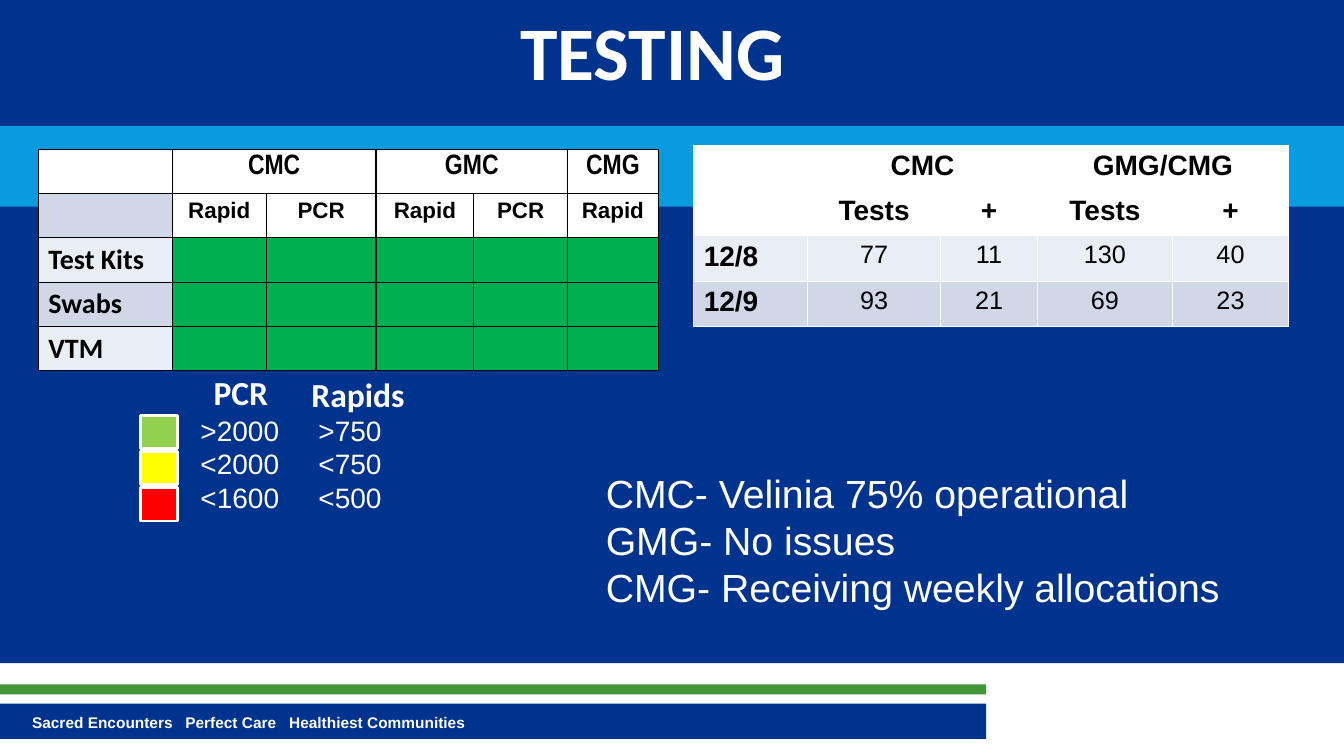
from lxml import etree
from pptx import Presentation
from pptx import util as u
from pptx.dml.color import RGBColor
from pptx.enum import shapes, text
from pptx.oxml.ns import qn

WIDTH, HEIGHT = 13.33, 7.5
COLORS = {
    "navy": "00338E", "sky": "099BDD", "leaf": "439539", "white": "FFFFFF",
    "black": "000000", "stock": "00B050", "light": "E9EDF4", "mid": "D0D8E8",
    "lime": "92D050", "yellow": "FFFF00", "red": "FF0000",
}

# Content
TITLE = "TESTING"
MOTTO = ["Sacred Encounters", "Perfect Care", "Healthiest Communities"]
STATUS_NOTES = [
    "CMC- Velinia 75% operational",
    "GMG- No issues",
    "CMG- Receiving weekly allocations",
]
SUPPLY_SITES = ["", "CMC", "", "GMC", "", "CMG"]
SUPPLY_KINDS = ["", "Rapid", "PCR", "Rapid", "PCR", "Rapid"]
SUPPLY_ITEMS = ["Test Kits", "Swabs", "VTM"]
RESULTS = [
    ["", "CMC", "", "GMG/CMG", ""],
    ["", "Tests", "+", "Tests", "+"],
    ["12/8", "77", "11", "130", "40"],
    ["12/9", "93", "21", "69", "23"],
]
LEGEND = [("lime", ">2000", ">750"), ("yellow", "<2000", "<750"), ("red", "<1600", "<500")]

# Layout in inches
BANDS = [
    ("navy", 0, 0, WIDTH, 6.58),
    ("navy", 0, 6.98, 9.78, 0.35),
    ("leaf", 0, 6.79, 9.78, 0.1),
    ("sky", 0, 1.25, WIDTH, 0.8),
]
SUPPLY_COLUMNS = [1.33, 0.93, 1.09, 0.97, 0.93, 0.9]
RESULT_COLUMNS = [1.13, 1.32, 0.96, 1.34, 1.15]
SWATCH_LEFT, SWATCH_TOP, SWATCH_STEP = 1.39, 4.12, 0.36


def rgb(name):
    return RGBColor.from_string(COLORS[name])


def add_rectangle(slide, color, left, top, width, height, outline=None):
    shape = slide.shapes.add_shape(
        shapes.MSO_SHAPE.RECTANGLE, *map(u.Inches, (left, top, width, height)))
    shape.shadow.inherit = False
    shape.fill.solid()
    shape.fill.fore_color.rgb = rgb(color)
    if outline:
        shape.line.color.rgb = rgb(outline)
        shape.line.width = u.Pt(2)
    else:
        shape.line.fill.background()


def format_runs(paragraph, size, font, bold, color):
    for run in paragraph.runs:
        run.font.size = u.Pt(size)
        run.font.name = font
        run.font.bold = bold
        run.font.color.rgb = rgb(color)


def add_text(slide, lines, box, size, font="Arial", bold=False, wrap=True,
             align=text.PP_ALIGN.LEFT, tabs=()):
    """Add white text, one paragraph per line, with tab stops in inches."""
    frame = slide.shapes.add_textbox(*map(u.Inches, box)).text_frame
    frame.word_wrap = wrap
    frame.text = "\n".join(lines)
    for paragraph in frame.paragraphs:
        paragraph.alignment = align
        if tabs:
            stops = etree.SubElement(paragraph._p.get_or_add_pPr(), qn("a:tabLst"))
            for position in tabs:
                etree.SubElement(stops, qn("a:tab"), pos=str(u.Inches(position)), algn="l")
        format_runs(paragraph, size, font, bold, "white")


def set_borders(cell, color):
    properties = cell._tc.get_or_add_tcPr()
    for index, side in enumerate(("lnL", "lnR", "lnT", "lnB")):
        line = etree.Element(qn("a:" + side), w=str(u.Pt(1)))
        fill = etree.SubElement(line, qn("a:solidFill"))
        etree.SubElement(fill, qn("a:srgbClr"), val=COLORS[color])
        properties.insert(index, line)


def add_grid(slide, rows, left, top, columns, row_height, border, merges, style):
    """Add a table; style(row, column) gives fill, size, font and bold."""
    frame = slide.shapes.add_table(
        len(rows), len(columns), u.Inches(left), u.Inches(top),
        u.Inches(sum(columns)), u.Inches(row_height * len(rows)))
    table = frame.table
    table.first_row = table.horz_banding = False
    for column, width in zip(table.columns, columns):
        column.width = u.Inches(width)
    for r, values in enumerate(rows):
        table.rows[r].height = u.Inches(row_height)
        for c, value in enumerate(values):
            cell = table.cell(r, c)
            fill, size, font, bold = style(r, c)
            cell.fill.solid()
            cell.fill.fore_color.rgb = rgb(fill)
            set_borders(cell, border)
            cell.text_frame.text = value
            paragraph = cell.text_frame.paragraphs[0]
            paragraph.alignment = text.PP_ALIGN.CENTER if c else text.PP_ALIGN.LEFT
            format_runs(paragraph, size, font, bold, "black")
    for first in merges:
        table.cell(0, first).merge(table.cell(0, first + 1))


def supply_style(row, column):
    if row >= 2 and column:
        fill = "stock"
    elif row == 0 or column:
        fill = "white"
    else:
        fill = "mid" if row % 2 else "light"
    size, font = {0: (20, "Arial Narrow"), 1: (16, "Arial")}.get(row, (20, "Calibri"))
    return fill, size, font, True


def result_style(row, column):
    fill = ("white", "white", "light", "mid")[row]
    heading = row < 2 or column == 0
    return fill, 20 if heading else 18, "Arial", heading


def main():
    presentation = Presentation()
    presentation.slide_width = u.Inches(WIDTH)
    presentation.slide_height = u.Inches(HEIGHT)
    slide = presentation.slides.add_slide(presentation.slide_layouts[6])

    for band in BANDS:
        add_rectangle(slide, *band)
    add_text(slide, ["\t".join(MOTTO)], (0.22, 7.03, 8.33, 0.29), 11, bold=True,
             tabs=(1.52, 2.55))
    add_text(slide, [TITLE], (1.12, 0, 10.7, 1.65), 54, "Calibri", True,
             align=text.PP_ALIGN.CENTER)

    supply_rows = [SUPPLY_SITES, SUPPLY_KINDS]
    supply_rows += [[item] + [""] * 5 for item in SUPPLY_ITEMS]
    add_grid(slide, supply_rows, 0.38, 1.48, SUPPLY_COLUMNS, 0.44, "black", (1, 3), supply_style)
    add_grid(slide, RESULTS, 6.88, 1.44, RESULT_COLUMNS, 0.45, "white", (1, 3), result_style)

    add_text(slide, STATUS_NOTES, (5.91, 4.61, 7.01, 1.51), 28)

    for index, (color, _, _) in enumerate(LEGEND):
        add_rectangle(slide, color, SWATCH_LEFT, SWATCH_TOP + index * SWATCH_STEP,
                      0.37, 0.33, "white")
    add_text(slide, [f"{pcr}\t{rapid}" for _, pcr, rapid in LEGEND],
             (1.89, 4.05, 5.63, 1.11), 20, tabs=(1.17,))
    add_text(slide, ["PCR"], (2.02, 3.64, 0.75, 0.5), 24, "Calibri", True, wrap=False)
    add_text(slide, ["Rapids"], (2.99, 3.66, 1.14, 0.5), 24, "Calibri", True, wrap=False)

    presentation.save("out.pptx")


if __name__ == "__main__":
    main()
